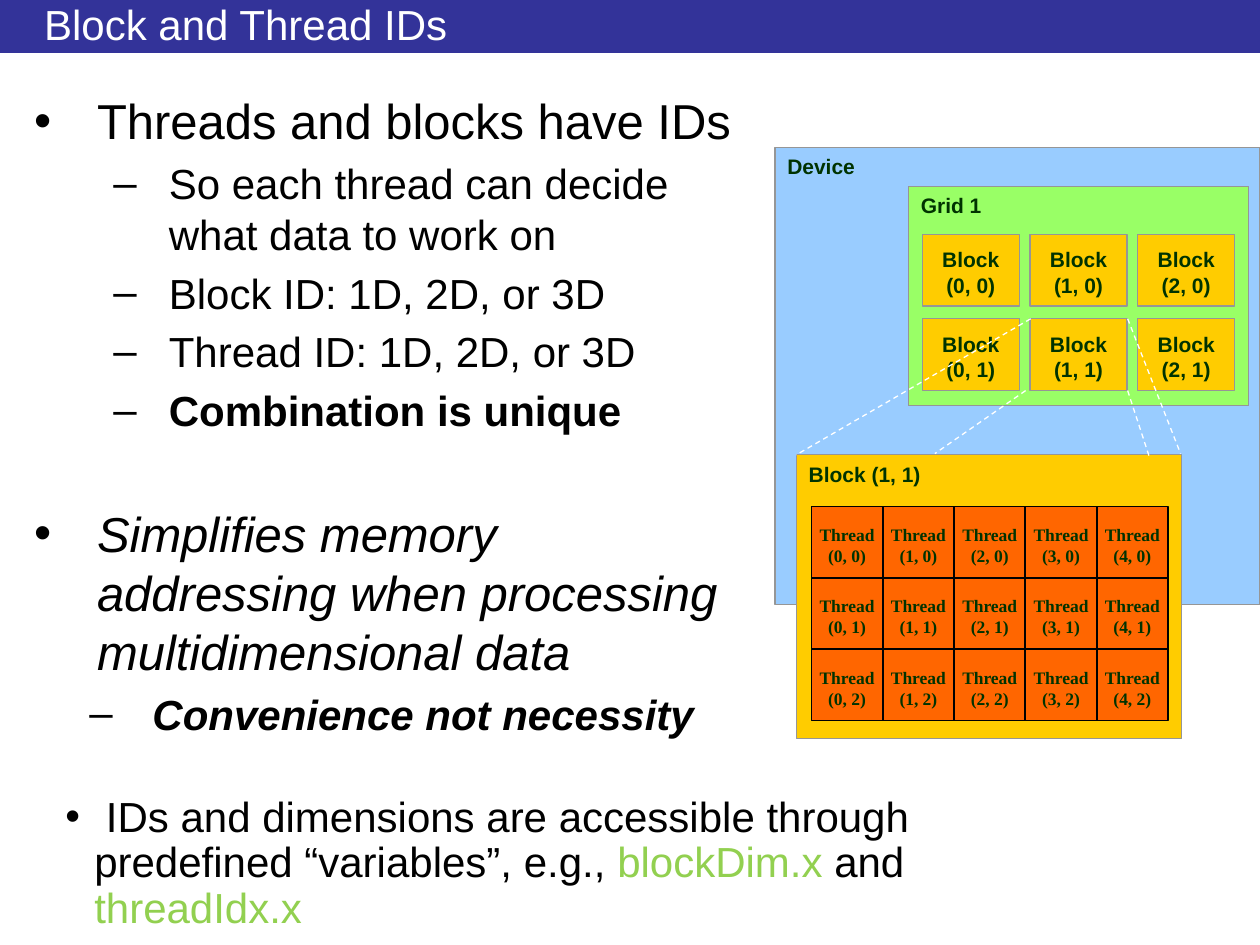
import pptx
import pptx.dml.color
import pptx.enum.dml
import pptx.enum.shapes
import pptx.enum.text
import pptx.oxml.ns
import pptx.util
import lxml.etree

Inches = pptx.util.Inches
Pt = pptx.util.Pt
RGBColor = pptx.dml.color.RGBColor
ALIGN = pptx.enum.text.PP_ALIGN
ANCHOR = pptx.enum.text.MSO_ANCHOR
RECTANGLE = pptx.enum.shapes.MSO_SHAPE.RECTANGLE
qn = pptx.oxml.ns.qn

WHITE = RGBColor(0xFF, 0xFF, 0xFF)
BLACK = RGBColor(0, 0, 0)
NAVY = RGBColor(0x33, 0x33, 0x99)
SKY = RGBColor(0x99, 0xCC, 0xFF)
LIME = RGBColor(0x99, 0xFF, 0x66)
GOLD = RGBColor(0xFF, 0xCC, 0x00)
ORANGE = RGBColor(0xFF, 0x66, 0x00)
GRAY = RGBColor(0x96, 0x96, 0x96)
FOREST = RGBColor(0, 0x33, 0)
CODE_GREEN = RGBColor(0x92, 0xD0, 0x50)

TITLE = "Block and Thread IDs"
MAIN = dict(size=28, bullet="•", margin=0.5, hanging=0.5, before=6)
SUB = dict(size=24, bullet="–", level=1, margin=1.07, hanging=0.44, before=4.8)
POINTS = [
    ("Threads and blocks have IDs", MAIN),
    ("So each thread can decide what data to work on", SUB),
    ("Block ID: 1D, 2D, or 3D", SUB),
    ("Thread ID: 1D, 2D, or 3D", SUB),
    ("Combination is unique", SUB | dict(bold=True)),
    ("Simplifies memory\naddressing when processing\nmultidimensional data",
     MAIN | dict(italic=True, before=39)),
    ("Convenience not necessity",
     SUB | dict(bold=True, italic=True, margin=0.94, hanging=0.5)),
]
ACCESS_NOTE = [
    (" IDs and dimensions are accessible through \npredefined “variables”, e.g., ", BLACK),
    ("blockDim.x", CODE_GREEN),
    (" and ", BLACK),
    ("threadIdx.x", CODE_GREEN),
]
DEVICE = ("Device", (6.15, 1.17, 3.85, 3.63), SKY)
GRID = ("Grid 1", (7.21, 1.48, 2.7, 1.74), LIME)
DETAIL = ("Block (1, 1)", (6.32, 3.61, 3.06, 2.25), GOLD)
BLOCK_COLUMNS, BLOCK_ROWS = 3, 2
BLOCK_LEFT, BLOCK_TOP, BLOCK_WIDTH, BLOCK_HEIGHT = 7.32, 1.86, 0.77, 0.57
BLOCK_STEP_X, BLOCK_STEP_Y = 0.855, 0.67
THREAD_COLUMNS, THREAD_ROWS = 5, 3
THREADS_LEFT, THREADS_TOP, THREADS_WIDTH, THREADS_HEIGHT = 6.44, 4.02, 2.83, 1.7
THREAD_LABEL_WIDTH, THREAD_LABEL_HEIGHT = 0.46, 0.29
ZOOM_LINES = [
    (8.18, 2.53, 6.32, 3.61),
    (8.95, 2.53, 9.37, 3.6),
    (8.14, 3.1, 7.42, 3.6),
    (8.95, 3.1, 9.12, 3.62),
]


def write(frame, text, size=12, color=FOREST, font="Arial", bold=False, italic=False,
          align=ALIGN.LEFT, level=0, before=0, spacing=1.0,
          bullet=None, margin=0, hanging=0):
    paragraph = frame.paragraphs[0]
    if paragraph.runs:
        paragraph = frame.add_paragraph()
    paragraph.alignment = align
    paragraph.level = level
    paragraph.space_before = Pt(before)
    paragraph.line_spacing = spacing
    if bullet:
        properties = paragraph._p.get_or_add_pPr()
        properties.set("marL", str(Inches(margin)))
        properties.set("indent", str(-Inches(hanging)))
        lxml.etree.SubElement(properties, qn("a:buFont")).set("typeface", font)
        lxml.etree.SubElement(properties, qn("a:buChar")).set("char", bullet)
    pieces = [(text, color)] if isinstance(text, str) else text
    for words, piece_color in pieces:
        for index, line in enumerate(words.split("\n")):
            if index:
                paragraph.add_line_break()
            run = paragraph.add_run()
            run.text = line
            run.font.name = font
            run.font.size = Pt(size)
            run.font.bold = bold
            run.font.italic = italic
            run.font.color.rgb = piece_color


def place(shape, left, top, width, height):
    shape.left, shape.top = Inches(left), Inches(top)
    shape.width, shape.height = Inches(width), Inches(height)


def set_insets(frame, top=0):
    frame.margin_left = frame.margin_right = frame.margin_bottom = 0
    frame.margin_top = Inches(top)


def add_box(shapes, area, fill, line=GRAY, weight=0.75):
    box = shapes.add_shape(RECTANGLE, *map(Inches, area))
    box.shadow.inherit = False
    box.fill.solid()
    box.fill.fore_color.rgb = fill
    if line is None:
        box.line.fill.background()
    else:
        box.line.color.rgb = line
        box.line.width = Pt(weight)
    box.text_frame.vertical_anchor = ANCHOR.TOP
    return box


def add_panel(shapes, label, area, fill):
    write(add_box(shapes, area, fill).text_frame, label, bold=True)


def add_line(shapes, ends, color, weight, dash=None):
    line = shapes.add_connector(pptx.enum.shapes.MSO_CONNECTOR.STRAIGHT, *map(Inches, ends))
    line.line.color.rgb = color
    line.line.width = Pt(weight)
    if dash:
        line.line.dash_style = dash
    lxml.etree.SubElement(line._element.spPr, qn("a:effectLst"))


def add_blocks(shapes):
    for row in range(BLOCK_ROWS):
        for column in range(BLOCK_COLUMNS):
            area = (BLOCK_LEFT + column * BLOCK_STEP_X, BLOCK_TOP + row * BLOCK_STEP_Y,
                    BLOCK_WIDTH, BLOCK_HEIGHT)
            frame = add_box(shapes, area, GOLD).text_frame
            set_insets(frame, top=0.1)
            for label in ("Block", f"({column}, {row})"):
                write(frame, label, bold=True, align=ALIGN.CENTER)


def add_threads(shapes):
    right, bottom = THREADS_LEFT + THREADS_WIDTH, THREADS_TOP + THREADS_HEIGHT
    step_x, step_y = THREADS_WIDTH / THREAD_COLUMNS, THREADS_HEIGHT / THREAD_ROWS
    add_box(shapes, (THREADS_LEFT, THREADS_TOP, THREADS_WIDTH, THREADS_HEIGHT), ORANGE, BLACK, 1)
    for row in range(1, THREAD_ROWS):
        y = THREADS_TOP + row * step_y
        add_line(shapes, (THREADS_LEFT, y, right, y), BLACK, 1)
    for column in range(1, THREAD_COLUMNS):
        x = THREADS_LEFT + column * step_x
        add_line(shapes, (x, THREADS_TOP, x, bottom), BLACK, 1)
    for row in range(THREAD_ROWS):
        for column in range(THREAD_COLUMNS):
            area = (THREADS_LEFT + column * step_x + (step_x - THREAD_LABEL_WIDTH) / 2,
                    THREADS_TOP + row * step_y + (step_y - THREAD_LABEL_HEIGHT) / 2,
                    THREAD_LABEL_WIDTH, THREAD_LABEL_HEIGHT)
            frame = shapes.add_textbox(*map(Inches, area)).text_frame
            frame.word_wrap = False
            set_insets(frame)
            for label in ("Thread", f"({column}, {row})"):
                write(frame, label, size=10, font="Times New Roman", bold=True,
                      align=ALIGN.CENTER)


def main():
    deck = pptx.Presentation()
    deck.slide_width, deck.slide_height = Inches(10), Inches(7.5)
    slide = deck.slides.add_slide(deck.slide_layouts[1])
    title, body = slide.placeholders

    banner = add_box(slide.shapes, (0, 0, 10, 0.42), NAVY, line=None)
    title._element.addprevious(banner._element)

    place(title, 0.25, 0.05, 9.25, 0.28)
    title.text_frame.vertical_anchor = ANCHOR.MIDDLE
    title.text_frame.auto_size = pptx.enum.text.MSO_AUTO_SIZE.NONE
    write(title.text_frame, TITLE, size=24, color=WHITE)

    place(body, 0.17, 0.67, 5.75, 4.58)
    body.text_frame.auto_size = pptx.enum.text.MSO_AUTO_SIZE.NONE
    for text, style in POINTS:
        write(body.text_frame, text, color=BLACK, **style)

    diagram = slide.shapes.add_group_shape().shapes
    add_panel(diagram, *DEVICE)
    add_panel(diagram, *GRID)
    add_blocks(diagram)
    add_panel(diagram, *DETAIL)
    add_threads(diagram)
    for ends in ZOOM_LINES:
        add_line(diagram, ends, WHITE, 0.75, pptx.enum.dml.MSO_LINE.DASH)

    note = slide.shapes.add_textbox(*map(Inches, (0.42, 6.27, 8.38, 1.23))).text_frame
    note.word_wrap = True
    write(note, ACCESS_NOTE, size=24, bullet="•", margin=0.23, hanging=0.23,
          before=4.8, spacing=0.9)

    deck.save("out.pptx")


if __name__ == "__main__":
    main()
